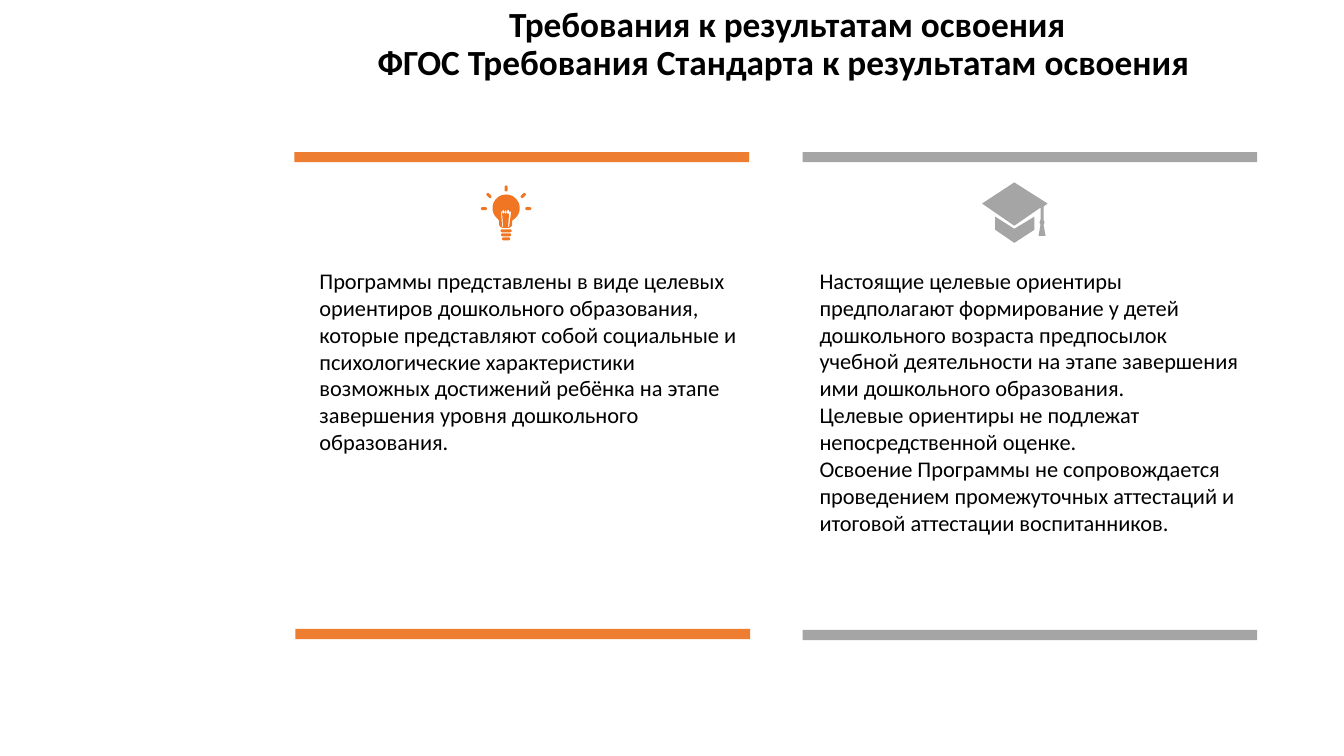
from math import cos, radians, sin

from pptx import Presentation
from pptx.dml.color import RGBColor
from pptx.enum.shapes import MSO_SHAPE as Kind
from pptx.enum.text import MSO_ANCHOR as Anchor, PP_ALIGN as Align
from pptx.util import Pt

PX = 9144  # 100 px to the inch
FINE = 10  # icon grid steps in one px
ORANGE, BULB, GRAY, BLACK = "ED7D31", "F07624", "A5A5A5", "000000"

deck = Presentation()
deck.slide_width, deck.slide_height = 1333 * PX, 750 * PX
shapes = deck.slides.add_slide(deck.slide_layouts[6]).shapes


def paint(shape, fill):
    shape.shadow.inherit = False
    shape.fill.solid()
    shape.fill.fore_color.rgb = RGBColor.from_string(fill)
    shape.line.fill.background()


def write(lines, x, y, w, h, size=16, bold=False, align=Align.LEFT,
          anchor=Anchor.TOP, space=1.0):
    frame = shapes.add_textbox(x * PX, y * PX, w * PX, h * PX).text_frame
    frame.word_wrap = True
    frame.vertical_anchor = anchor
    frame.text = "\n".join(lines)
    for para in frame.paragraphs:
        para.alignment, para.line_spacing = align, space
        for run in para.runs:
            font = run.font
            font.name, font.size, font.bold = "Calibri", Pt(size), bold
            font.color.rgb = RGBColor.from_string(BLACK)


# Title
write(["Требования к результатам освоения\v"
       "ФГОС Требования Стандарта к результатам освоения "],
      227, 0, 1108, 90, size=25.2, bold=True, align=Align.CENTER,
      anchor=Anchor.MIDDLE, space=0.9)

# Bars above and below each column
for x, y, hue in [(292, 151, ORANGE), (293, 624, ORANGE),
                  (796, 151, GRAY), (796, 625, GRAY)]:
    paint(shapes.add_shape(Kind.RECTANGLE, x * PX, y * PX, 451 * PX, 10 * PX), hue)

# Column texts
write(["Программы представлены в виде целевых ориентиров дошкольного образования, "
       "которые представляют собой социальные и психологические характеристики "
       "возможных достижений ребёнка на этапе завершения уровня дошкольного "
       "образования."], 307, 260, 436, 199)
write(["Настоящие целевые ориентиры предполагают формирование у детей дошкольного "
       "возраста предпосылок учебной деятельности на этапе завершения ими "
       "дошкольного образования.",
       "Целевые ориентиры не подлежат непосредственной оценке.",
       "Освоение Программы не сопровождается проведением промежуточных аттестаций "
       "и итоговой аттестации воспитанников."], 803, 260, 436, 306)

# Graduation cap: band, then board with tassel
cap = [[(987, 215), (1006, 227), (1026, 215), (1026, 228), (1006, 241), (987, 228)],
       [(1006, 181), (1039, 202), (1035, 205), (1035, 218), (1036, 221),
        (1035, 223), (1037, 234), (1030, 234), (1032, 223), (1031, 221),
        (1032, 218), (1032, 206), (1006, 224), (974, 202)]]

# Light bulb: round glass running into the neck
glass = [(502 + 13.5 * cos(radians(a)), 206.5 + 13.5 * sin(radians(a)))
         for a in range(130, 411, 10)]
neck = [(508, 219), (508, 223), (507, 225), (505, 226),
        (498, 226), (496, 225), (495, 223), (495, 219)]
# Filament, wound the other way to cut a hole
coil = [(499, 208), (498, 210), (497, 210), (498, 225), (499, 225), (498, 211),
        (499, 211), (499, 212), (500, 212), (500, 211), (501, 211), (501, 212),
        (502, 212), (502, 211), (503, 211), (503, 212), (505, 212), (505, 211),
        (504, 225), (505, 225), (507, 210), (505, 210), (505, 209), (504, 208),
        (503, 209), (503, 210), (502, 210), (502, 208), (501, 209), (501, 210),
        (500, 210), (500, 209)]
bulb = [glass + neck, coil]

# Rays and base strips: centre, length, turn
pills = [(480, 207, 6, 0), (524, 207, 6, 0), (502, 187, 6, 90),
         (485, 194, 6, 45), (519, 194, 6, -45),
         (502, 229, 11, 0), (502, 233, 10, 0), (502, 237, 8, 0)]
for x, y, w, turn in pills:
    edge = []
    for side in (1, -1):
        mid = side * (w - 3) / 2
        for a in range(-90, 91, 30):
            u = mid + side * 1.5 * cos(radians(a))
            v = side * 1.5 * sin(radians(a))
            c, s = cos(radians(turn)), sin(radians(turn))
            edge.append((x + u * c - v * s, y + u * s + v * c))
    bulb.append(edge)

# Each icon is one outline
for icon, hue in [(cap, GRAY), (bulb, BULB)]:
    pen = None
    for edge in icon:
        dots = [(round(x * FINE), round(y * FINE)) for x, y in edge]
        if pen:
            pen.move_to(*dots[0])
        else:
            pen = shapes.build_freeform(*dots[0], scale=PX / FINE)
        pen.add_line_segments(dots[1:])
    paint(pen.convert_to_shape(), hue)

deck.save("out.pptx")
